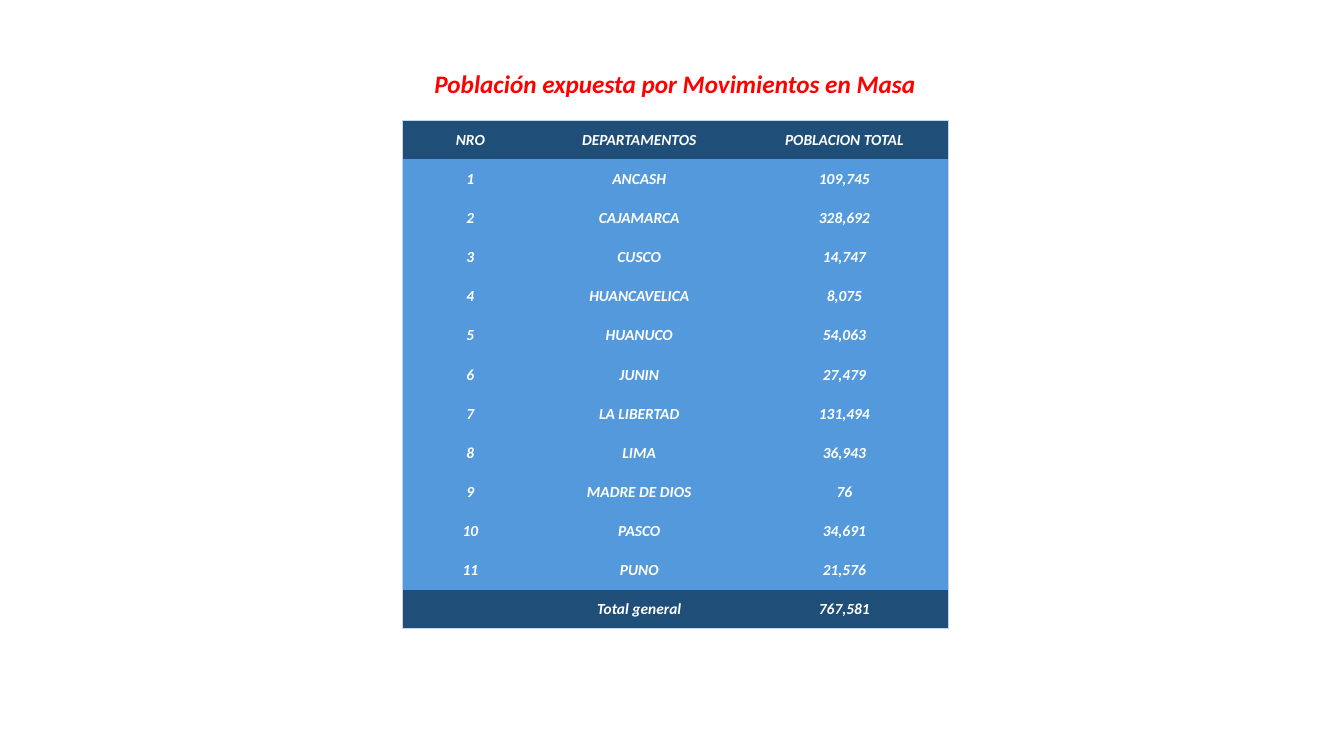
"""Build a slide with a table of the population exposed to mass movements."""
import pptx
import pptx.dml.color
import pptx.enum.text
import pptx.oxml
import pptx.oxml.ns
import pptx.util

TITLE = "Población expuesta por Movimientos en Masa"
HEADER = ("NRO", "DEPARTAMENTOS", "POBLACION TOTAL")
DEPARTMENTS = [
    ("ANCASH", "109,745"),
    ("CAJAMARCA", "328,692"),
    ("CUSCO", "14,747"),
    ("HUANCAVELICA", "8,075"),
    ("HUANUCO", "54,063"),
    ("JUNIN", "27,479"),
    ("LA LIBERTAD", "131,494"),
    ("LIMA", "36,943"),
    ("MADRE DE DIOS", "76"),
    ("PASCO", "34,691"),
    ("PUNO", "21,576"),
]
TOTAL = ("", "Total general", "767,581")
COLORS = {
    "title": "FF0000",
    "text": "FFFFFF",
    "band": "1F4E79",
    "body": "5499DB",
    "border": "C4D5EB",
}
FONT = "Calibri"
TITLE_BOX = (4.18, 0.63, 5.03, 0.4)
TABLE_LEFT, TABLE_TOP, TABLE_HEIGHT = 3.99, 1.19, 5.05
COLUMN_WIDTHS = (1.35, 2, 2.07)

Inches = pptx.util.Inches


def write_text(frame, text, size, color):
    frame.text = text
    para = frame.paragraphs[0]
    para.alignment = pptx.enum.text.PP_ALIGN.CENTER
    for span in para.runs:
        span.font.name = FONT
        span.font.size = pptx.util.Pt(size)
        span.font.bold = span.font.italic = True
        span.font.color.rgb = pptx.dml.color.RGBColor.from_string(COLORS[color])


def set_borders(cell, visible_sides):
    properties = cell._tc.get_or_add_tcPr()
    namespace = pptx.oxml.ns.nsdecls("a")
    for side in "LRTB":
        if side in visible_sides:
            color = COLORS["border"]
            line = f'<a:solidFill><a:srgbClr val="{color}"/></a:solidFill>'
        else:
            line = "<a:noFill/>"
        properties.append(pptx.oxml.parse_xml(
            f'<a:ln{side} {namespace} w="6350">{line}</a:ln{side}>'))


def add_title(page):
    box = page.shapes.add_textbox(*map(Inches, TITLE_BOX))
    box.text_frame.word_wrap = False
    box.text_frame.auto_size = pptx.enum.text.MSO_AUTO_SIZE.SHAPE_TO_FIT_TEXT
    write_text(box.text_frame, TITLE, 18, "title")


def add_population_table(page):
    numbered = [(str(number), *entry) for number, entry in enumerate(DEPARTMENTS, 1)]
    rows = [HEADER, *numbered, TOTAL]
    last_row, last_column = len(rows) - 1, len(HEADER) - 1
    table = page.shapes.add_table(
        len(rows), len(HEADER), Inches(TABLE_LEFT), Inches(TABLE_TOP),
        Inches(sum(COLUMN_WIDTHS)), Inches(TABLE_HEIGHT)).table
    table.first_row = table.horz_banding = False
    for column, width in zip(table.columns, COLUMN_WIDTHS):
        column.width = Inches(width)
    for row_index, values in enumerate(rows):
        table.rows[row_index].height = Inches(TABLE_HEIGHT / len(rows))
        fill = "band" if row_index in (0, last_row) else "body"
        for column_index, value in enumerate(values):
            cell = table.cell(row_index, column_index)
            cell.margin_left = cell.margin_right = cell.margin_top = Inches(0.01)
            cell.margin_bottom = 0
            cell.vertical_anchor = pptx.enum.text.MSO_ANCHOR.MIDDLE
            write_text(cell.text_frame, value, 11, "text")
            edges = {"L": column_index == 0, "R": column_index == last_column,
                     "T": row_index == 0, "B": row_index == last_row}
            set_borders(cell, [side for side, outer in edges.items() if outer])
            cell.fill.solid()
            cell.fill.fore_color.rgb = pptx.dml.color.RGBColor.from_string(COLORS[fill])


def main():
    deck = pptx.Presentation()
    deck.slide_width, deck.slide_height = Inches(13.33), Inches(7.5)
    page = deck.slides.add_slide(deck.slide_layouts[6])
    add_title(page)
    add_population_table(page)
    deck.save("out.pptx")


if __name__ == "__main__":
    main()
